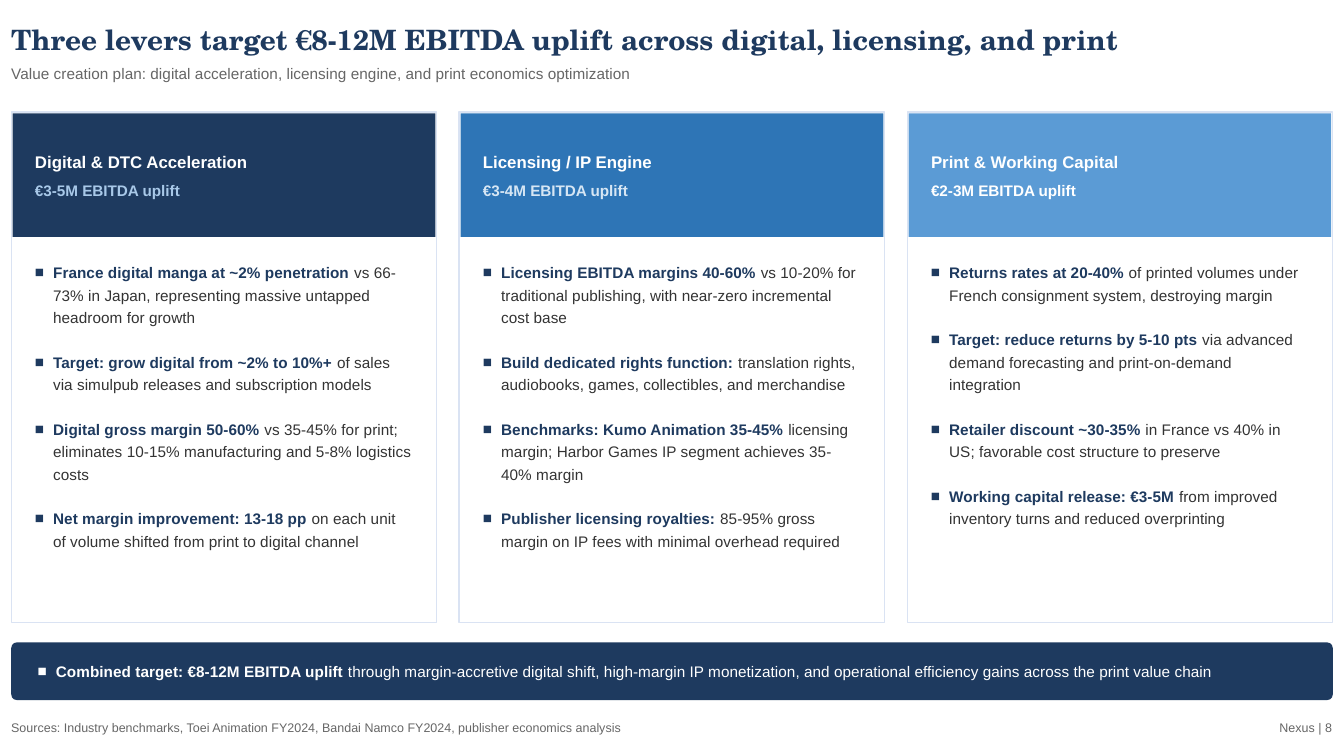
from lxml.etree import SubElement
from pptx import Presentation
from pptx.dml.color import RGBColor
from pptx.enum.shapes import MSO_SHAPE
from pptx.oxml.ns import qn
from pptx.util import Inches, Pt

# Content
TITLE = "Three levers target €8-12M EBITDA uplift across digital, licensing, and print"
SUBTITLE = ("Value creation plan: digital acceleration, licensing engine, "
            "and print economics optimization")
LEVERS = [
    {"name": "Digital & DTC Acceleration", "uplift": "€3-5M EBITDA uplift",
     "band": "navy", "uplift_color": "ice", "points_h": 2.16,
     "points": [
         ("France digital manga at ~2% penetration",
          " vs 66-73% in Japan, representing massive untapped headroom for growth"),
         ("Target: grow digital from ~2% to 10%+",
          " of sales via simulpub releases and subscription models"),
         ("Digital gross margin 50-60%",
          " vs 35-45% for print; eliminates 10-15% manufacturing and 5-8% logistics costs"),
         ("Net margin improvement: 13-18 pp",
          " on each unit of volume shifted from print to digital channel")]},
    {"name": "Licensing / IP Engine", "uplift": "€3-4M EBITDA uplift",
     "band": "blue", "uplift_color": "mist", "points_h": 2.33,
     "points": [
         ("Licensing EBITDA margins 40-60%",
          " vs 10-20% for traditional publishing, with near-zero incremental cost base"),
         ("Build dedicated rights function:",
          " translation rights, audiobooks, games, collectibles, and merchandise"),
         ("Benchmarks: Kumo Animation 35-45%",
          " licensing margin; Harbor Games IP segment achieves 35-40% margin"),
         ("Publisher licensing royalties:",
          " 85-95% gross margin on IP fees with minimal overhead required")]},
    {"name": "Print & Working Capital", "uplift": "€2-3M EBITDA uplift",
     "band": "sky", "uplift_color": "white", "points_h": 1.99,
     "points": [
         ("Returns rates at 20-40%",
          " of printed volumes under French consignment system, destroying margin"),
         ("Target: reduce returns by 5-10 pts",
          " via advanced demand forecasting and print-on-demand integration"),
         ("Retailer discount ~30-35%",
          " in France vs 40% in US; favorable cost structure to preserve"),
         ("Working capital release: €3-5M",
          " from improved inventory turns and reduced overprinting")]},
]
COMBINED = ("Combined target: €8-12M EBITDA uplift",
            " through margin-accretive digital shift, high-margin IP monetization, "
            "and operational efficiency gains across the print value chain")
SOURCES = ("Sources: Industry benchmarks, Toei Animation FY2024, "
           "Bandai Namco FY2024, publisher economics analysis")
PAGE = "Nexus | 8"

# Style
COLORS = {"navy": "1E3A5F", "blue": "2E75B6", "sky": "5B9BD5", "ice": "A8C8E8",
          "mist": "D6E6F4", "white": "FFFFFF", "border": "DAE3F3",
          "gray": "666666", "body": "333333"}
SERIF, SANS = "TeX Gyre Schola", "Arial"
TEXT_SIZE, UPLIFT_SIZE, FOOTER_SIZE = 8.25, 8.2, 6.75
INDENT = Pt(9.75)

# Grid: the slide is 120 units wide, in 16:9
SLIDE_W = 10
SLIDE_H = SLIDE_W * 9 / 16
UNIT = SLIDE_W / 120
MARGIN, CONTENT_W = UNIT, 118 * UNIT
CARD_W, PITCH = 38 * UNIT, 40 * UNIT
CARD_TOP, CARD_H = 10 * UNIT, 3.8
EDGE = UNIT / 8
PAD = 2 * UNIT + EDGE
SLACK = 1.02  # single-line labels are slightly wider than their column
FOOTER_TOP = 5.36


def color(name):
    return RGBColor.from_string(COLORS[name])


def add_box(preset, left, top, width, height, fill=None, line=None):
    box = slide.shapes.add_shape(preset, Inches(left), Inches(top),
                                 Inches(width), Inches(height))
    box.shadow.inherit = False
    if fill:
        box.fill.solid()
        box.fill.fore_color.rgb = color(fill)
    else:
        box.fill.background()
    if line:
        box.line.color.rgb = color(line)
        box.line.width = Pt(0.75)
    else:
        box.line.fill.background()
    return box


def add_frame(left, top, width, height):
    frame = slide.shapes.add_textbox(Inches(left), Inches(top),
                                     Inches(width), Inches(height)).text_frame
    frame.word_wrap = True
    frame.margin_left = frame.margin_right = 0
    frame.margin_top = frame.margin_bottom = 0
    return frame


def add_label(text, left, top, width, height, size, ink, bold=False,
              font=SANS, leading=None):
    label = add_frame(left, top, width, height).paragraphs[0]
    label.text = text
    if leading:
        label.line_spacing = Pt(leading)
    label.font.name, label.font.size = font, Pt(size)
    label.font.bold = bold
    label.font.color.rgb = color(ink)


def add_bullets(points, left, top, width, height, lead_ink, rest_ink,
                leading, after=0):
    frame = add_frame(left, top, width, height)
    for i, (lead, rest) in enumerate(points):
        point = frame.add_paragraph() if i else frame.paragraphs[0]
        props = point._p.get_or_add_pPr()
        props.set("marL", str(INDENT))
        props.set("indent", str(-INDENT))
        bullet_color = SubElement(props, qn("a:buClr"))
        SubElement(bullet_color, qn("a:srgbClr"), val=COLORS[lead_ink])
        SubElement(props, qn("a:buFont"), typeface=SANS)
        SubElement(props, qn("a:buChar"), char="■")
        point.line_spacing = Pt(leading)
        point.space_after = Pt(after)
        point.font.name, point.font.size = SANS, Pt(TEXT_SIZE)
        for text, ink, bold in ((lead, lead_ink, True), (rest, rest_ink, False)):
            run = point.add_run()
            run.text = text
            run.font.bold = bold
            run.font.color.rgb = color(ink)


deck = Presentation()
deck.slide_width, deck.slide_height = Inches(SLIDE_W), Inches(SLIDE_H)
slide = deck.slides.add_slide(deck.slide_layouts[6])
slide.background.fill.solid()
slide.background.fill.fore_color.rgb = color("white")

# Heading
add_label(TITLE, MARGIN, 0.17, CONTENT_W * SLACK, 0.24, 15, "navy", True, SERIF)
add_label(SUBTITLE, MARGIN, 0.46, CONTENT_W * SLACK, 0.15, TEXT_SIZE, "gray",
          leading=11.1)

# Lever cards
for column, lever in enumerate(LEVERS):
    left = MARGIN + column * PITCH
    text_left, text_w = left + PAD, CARD_W - 2 * PAD
    add_box(MSO_SHAPE.RECTANGLE, left, CARD_TOP, CARD_W, CARD_H, line="border")
    add_box(MSO_SHAPE.RECTANGLE, left + EDGE, CARD_TOP + EDGE,
            CARD_W - 2 * EDGE, 0.92, fill=lever["band"])
    add_label(lever["name"], text_left, 1.12, text_w * SLACK, 0.16, 9, "white",
              True, leading=11.7)
    add_label(lever["uplift"], text_left, 1.34, text_w * SLACK, 0.15, UPLIFT_SIZE,
              lever["uplift_color"], True, leading=10.7)
    add_bullets(lever["points"], text_left, 1.93, text_w, lever["points_h"],
                "navy", "body", leading=12, after=12)

# Combined target banner
banner = add_box(MSO_SHAPE.ROUNDED_RECTANGLE, MARGIN, 4.78, CONTENT_W, 0.43, fill="navy")
banner.adjustments[0] = 0.1
add_bullets([COMBINED], 0.28, 4.91, 9.44, 0.15, "white", "white", leading=11.1)

# Footer
add_label(SOURCES, MARGIN, FOOTER_TOP, 4.67, 0.1, FOOTER_SIZE, "gray")
add_label(PAGE, 9.52, FOOTER_TOP, 0.4, 0.1, FOOTER_SIZE, "gray")

deck.save("out.pptx")
